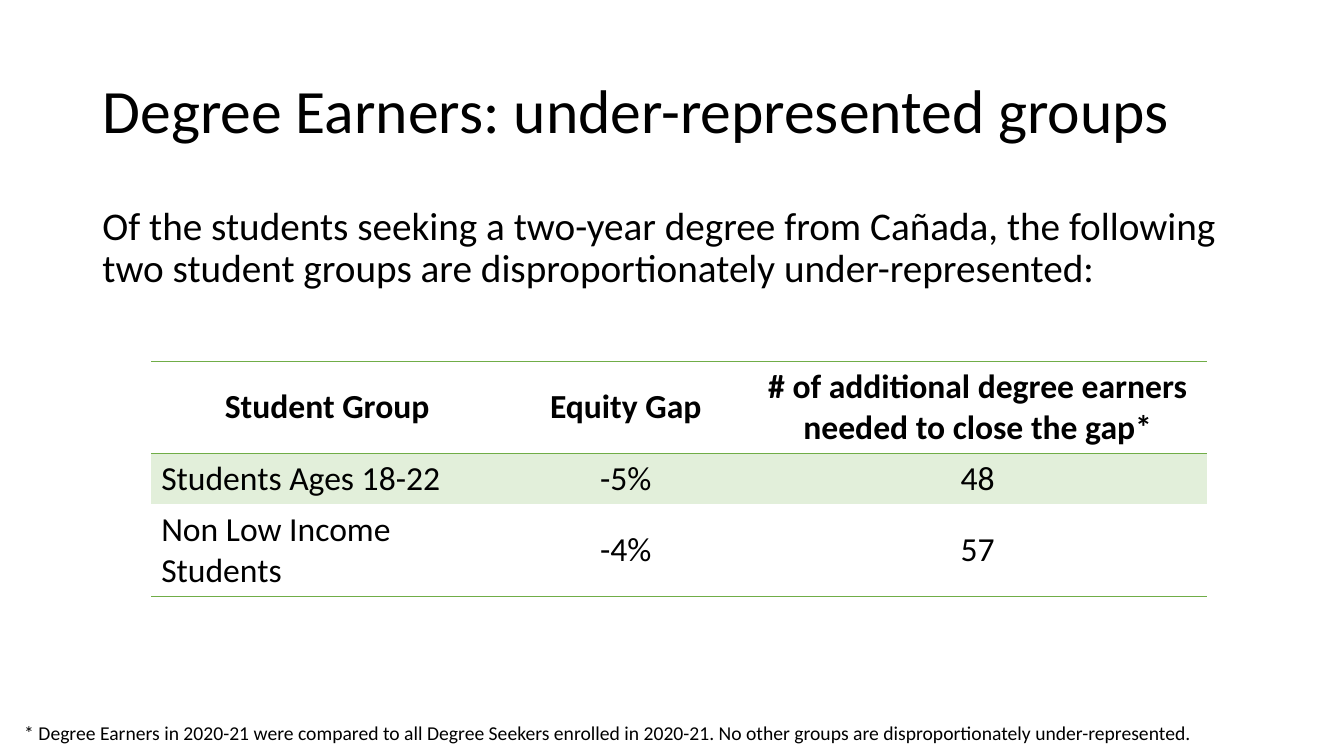
"""Build the slide on under-represented groups among degree earners."""
import dataclasses
import typing

import lxml.etree
import pptx
import pptx.dml.color
import pptx.enum.text
import pptx.oxml.ns
import pptx.util

Align = pptx.enum.text.PP_ALIGN
Anchor = pptx.enum.text.MSO_ANCHOR
AutoSize = pptx.enum.text.MSO_AUTO_SIZE
qn = pptx.oxml.ns.qn

PAGE_WIDTH = pptx.util.Inches(13.33)
PAGE_HEIGHT = pptx.util.Inches(7.5)
GRID_COLUMNS = 160
GRID_ROWS = 90


@dataclasses.dataclass(frozen=True)
class Theme:
    font: str = "Calibri"
    text: str = "000000"
    accent: str = "70AD47"
    band: str = "E2EFDA"
    title_size: int = 44
    body_size: int = 28
    table_size: int = 24
    note_size: int = 14
    line_spacing: float = 0.9
    rule_width: int = 1


@dataclasses.dataclass(frozen=True)
class Area:
    column: float
    row: float
    columns: float
    rows: float


class TableRow(typing.NamedTuple):
    values: tuple[str, str, str]
    rows: float
    header: bool = False
    banded: bool = False
    rules: tuple[str, ...] = ()


THEME = Theme()
TITLE_AREA = Area(11, 4.8, 138, 17.4)
BODY_AREA = Area(11, 24, 138, 57.1)
TABLE_AREA = Area(18, 43, 125.7, 27.6)
NOTE_AREA = Area(1.7, 85.2, 142.2, 4.1)
TABLE_COLUMNS = (41.9, 29.2, 54.6)
TABLE_ROWS = (
    TableRow(
        ("Student Group", "Equity Gap", "# of additional degree earners needed to close the gap*"),
        10.9, header=True, rules=("lnT", "lnB"),
    ),
    TableRow(("Students Ages 18-22", "-5%", "48"), 5.8, banded=True, rules=("lnT",)),
    TableRow(("Non Low Income Students", "-4%", "57"), 10.9, rules=("lnB",)),
)


def across(columns: float) -> int:
    return round(PAGE_WIDTH * columns / GRID_COLUMNS)


def down(rows: float) -> int:
    return round(PAGE_HEIGHT * rows / GRID_ROWS)


def bounds(area: Area) -> tuple[int, int, int, int]:
    return across(area.column), down(area.row), across(area.columns), down(area.rows)


def write(frame, text: str, size: int, align=Align.LEFT, bold: bool = False):
    para = frame.paragraphs[0]
    para.text = text
    para.alignment = align
    para.font.name = THEME.font
    para.font.size = pptx.util.Pt(size)
    para.font.bold = bold
    para.font.color.rgb = pptx.dml.color.RGBColor.from_string(THEME.text)
    return para


def fill_placeholder(box, area: Area, text: str, size: int, anchor) -> None:
    box.left, box.top, box.width, box.height = bounds(area)
    frame = box.text_frame
    frame.word_wrap = True
    frame.auto_size = AutoSize.NONE
    frame.vertical_anchor = anchor
    properties = frame.paragraphs[0]._p.get_or_add_pPr()
    properties.set("marL", "0")
    properties.set("indent", "0")
    lxml.etree.SubElement(properties, qn("a:buNone"))
    para = write(frame, text, size)
    para.line_spacing = THEME.line_spacing
    para.space_before = pptx.util.Pt(0)


def set_borders(cell, rules: tuple[str, ...]) -> None:
    properties = cell._tc.get_or_add_tcPr()
    for side in ("lnL", "lnR", "lnT", "lnB"):
        line = lxml.etree.SubElement(properties, qn(f"a:{side}"))
        if side in rules:
            line.set("w", str(pptx.util.Pt(THEME.rule_width)))
            paint = lxml.etree.SubElement(line, qn("a:solidFill"))
            lxml.etree.SubElement(paint, qn("a:srgbClr"), val=THEME.accent)
        else:
            lxml.etree.SubElement(line, qn("a:noFill"))


def add_gap_table(page) -> None:
    holder = page.shapes.add_table(len(TABLE_ROWS), len(TABLE_COLUMNS), *bounds(TABLE_AREA))
    table = holder.table
    table.first_row = table.horz_banding = False
    for column, width in zip(table.columns, TABLE_COLUMNS):
        column.width = across(width)
    for line, entry in zip(table.rows, TABLE_ROWS):
        line.height = down(entry.rows)
        for index, (cell, value) in enumerate(zip(line.cells, entry.values)):
            label = index == 0 and not entry.header
            cell.vertical_anchor = Anchor.TOP if label else Anchor.MIDDLE
            align = Align.LEFT if label else Align.CENTER
            write(cell.text_frame, value, THEME.table_size, align, entry.header)
            set_borders(cell, entry.rules)
            if entry.banded:
                cell.fill.solid()
                cell.fill.fore_color.rgb = pptx.dml.color.RGBColor.from_string(THEME.band)
            else:
                cell.fill.background()


def add_note(page, text: str) -> None:
    frame = page.shapes.add_textbox(*bounds(NOTE_AREA)).text_frame
    frame.word_wrap = False
    frame.auto_size = AutoSize.SHAPE_TO_FIT_TEXT
    write(frame, text, THEME.note_size)


def main() -> None:
    deck = pptx.Presentation()
    deck.slide_width, deck.slide_height = PAGE_WIDTH, PAGE_HEIGHT
    page = deck.slides.add_slide(deck.slide_layouts[1])
    title, body = page.placeholders
    fill_placeholder(
        title, TITLE_AREA, "Degree Earners: under-represented groups", THEME.title_size, Anchor.MIDDLE
    )
    fill_placeholder(
        body, BODY_AREA,
        "Of the students seeking a two-year degree from Cañada, the following "
        "two student groups are disproportionately under-represented:",
        THEME.body_size, Anchor.TOP,
    )
    add_gap_table(page)
    add_note(
        page,
        "* Degree Earners in 2020-21 were compared to all Degree Seekers enrolled in 2020-21. "
        "No other groups are disproportionately under-represented.",
    )
    deck.save("out.pptx")


if __name__ == "__main__":
    main()
